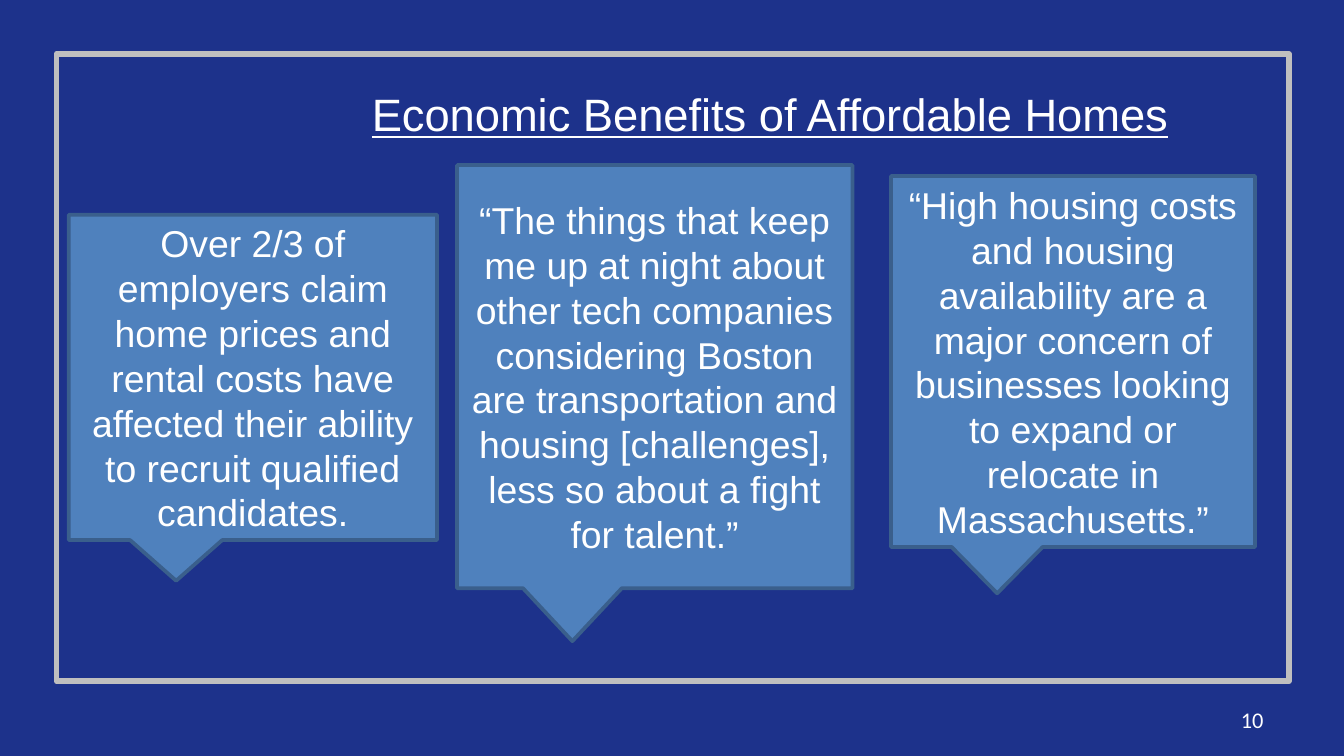
import pptx
import pptx.util
import pptx.dml.color
import pptx.enum.shapes
import pptx.enum.text
import pptx.oxml
import pptx.oxml.ns

Cm, Pt = pptx.util.Cm, pptx.util.Pt
MSO_SHAPE = pptx.enum.shapes.MSO_SHAPE
ALIGN = pptx.enum.text.PP_ALIGN
MIDDLE = pptx.enum.text.MSO_ANCHOR.MIDDLE

NAVY, SILVER, WHITE = "1D328B", "BFBFBF", "FFFFFF"
BLUE, STEEL = "4F81BD", "3A5F8C"

# Left, top, width, height in cm, then the text
CALLOUTS = [
    (1.3, 4.06, 6.96, 6.15,
     "Over 2/3 of employers claim home prices and rental costs have "
     "affected their ability to recruit qualified candidates."),
    (8.64, 3.12, 7.47, 8,
     "“The things that keep me up at night about other tech companies "
     "considering Boston are transportation and housing [challenges], "
     "less so about a fight for talent.”"),
    (16.84, 3.33, 6.88, 7.01,
     "“High housing costs and housing availability are a major concern "
     "of businesses looking to expand or relocate in Massachusetts.”"),
]


def set_color(color_format, value):
    color_format.rgb = pptx.dml.color.RGBColor.from_string(value)


def fill(obj, value):
    obj.fill.solid()
    set_color(obj.fill.fore_color, value)


def outline(sp, value, width):
    set_color(sp.line.color, value)
    sp.line.width = Pt(width)


def style_text(sp, size, align, font="Arial"):
    tf = sp.text_frame
    tf.word_wrap = True
    tf.auto_size = pptx.enum.text.MSO_AUTO_SIZE.NONE
    tf.vertical_anchor = MIDDLE
    p = tf.paragraphs[0]
    p.alignment = align
    p.font.name = font
    p.font.size = Pt(size)
    set_color(p.font.color, WHITE)
    return p


def add_frame(slide):
    sp = slide.shapes.add_shape(MSO_SHAPE.RECTANGLE, Cm(1.07), Cm(1.02), Cm(23.29), Cm(11.86))
    sp.shadow.inherit = False
    sp.fill.background()
    outline(sp, SILVER, 3)


def set_title(slide, text):
    sp = slide.shapes.title
    sp.left, sp.top, sp.width, sp.height = Cm(4.01), Cm(1.17), Cm(19.89), Cm(1.96)
    sp.text_frame.text = text
    sp.text_frame.margin_left = Cm(1.45)
    p = style_text(sp, 24.3, ALIGN.CENTER)
    p.font.underline = True


def add_callout(slide, left, top, width, height, text):
    sp = slide.shapes.add_shape(MSO_SHAPE.RECTANGULAR_CALLOUT,
                                Cm(left), Cm(top), Cm(width), Cm(height))
    sp.shadow.inherit = False
    fill(sp, BLUE)
    outline(sp, STEEL, 2)
    sp.text_frame.text = text
    p = style_text(sp, 20, ALIGN.CENTER)
    p.line_spacing = Pt(24)


def add_slide_number(slide, number):
    sp = slide.shapes.add_textbox(Cm(18.21), Cm(13.23), Cm(5.92), Cm(0.76))
    p = style_text(sp, 12, ALIGN.RIGHT, "Calibri")
    p.add_run().text = number


def main():
    prs = pptx.Presentation()
    prs.slide_width, prs.slide_height = Cm(25.4), Cm(14.29)
    slide = prs.slides.add_slide(prs.slide_layouts[0])
    fill(slide.background, NAVY)

    # The title layout's subtitle is not used
    subtitle = slide.placeholders[1].element
    subtitle.getparent().remove(subtitle)

    # Frame, title and page number
    add_frame(slide)
    set_title(slide, "Economic Benefits of Affordable Homes")
    add_slide_number(slide, "10")

    # Quotes
    for callout in CALLOUTS:
        add_callout(slide, *callout)

    prs.save("out.pptx")


if __name__ == "__main__":
    main()
